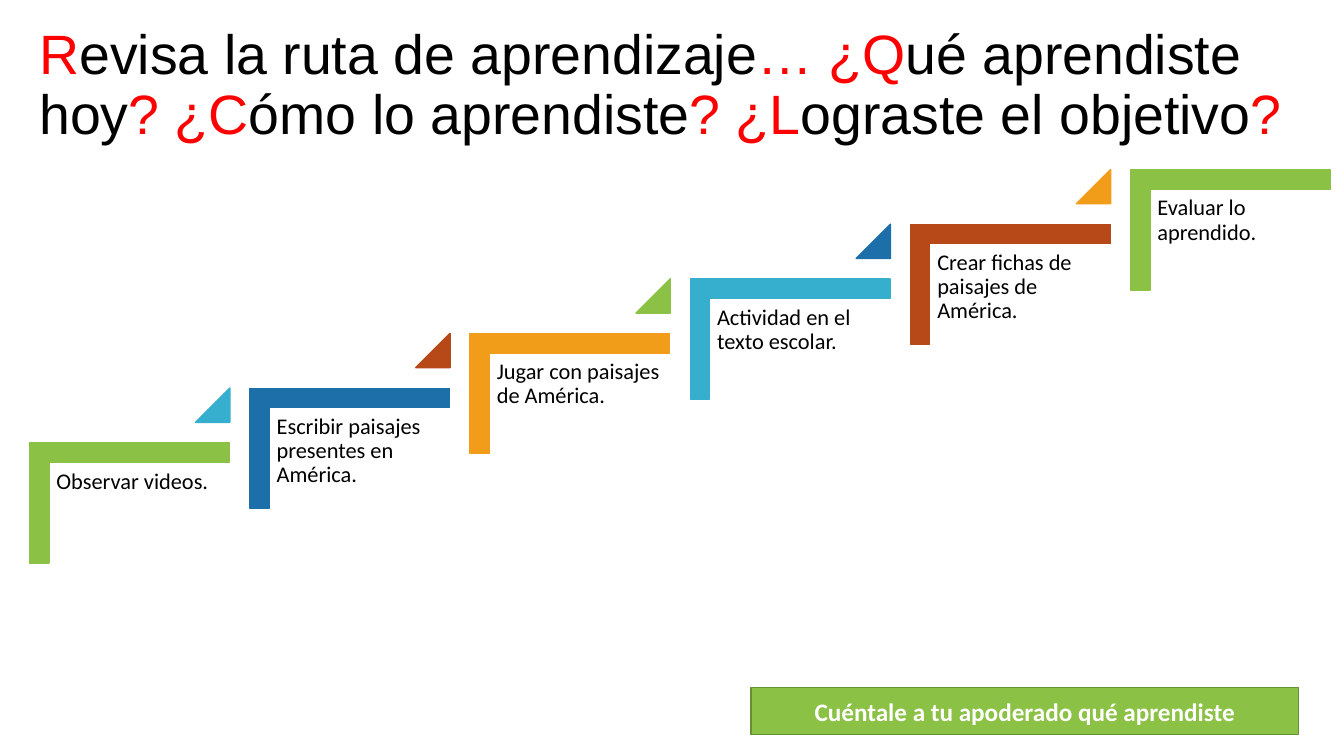
"""Build the learning route slide: a title, a rising staircase of steps and a closing banner."""
from pptx import Presentation
from pptx.dml.color import RGBColor
from pptx.enum.shapes import MSO_SHAPE
from pptx.enum.text import MSO_ANCHOR, MSO_AUTO_SIZE, PP_ALIGN
from pptx.util import Pt

BLACK = RGBColor(0x00, 0x00, 0x00)
WHITE = RGBColor(0xFF, 0xFF, 0xFF)
RED = RGBColor(0xFF, 0x00, 0x00)
GREEN = RGBColor(0x8B, 0xC1, 0x45)
DARK_GREEN = RGBColor(0x67, 0x8F, 0x33)
CYAN = RGBColor(0x36, 0xAF, 0xCE)
BLUE = RGBColor(0x1D, 0x6F, 0xA9)
RUST = RGBColor(0xB7, 0x49, 0x19)
ORANGE = RGBColor(0xF1, 0x9D, 0x19)
PALETTE = [GREEN, CYAN, BLUE, RUST, ORANGE]

TITLE = [
    ("R", RED), ("evisa la ruta de aprendizaje", BLACK),
    ("… ¿Q", RED), ("ué aprendiste hoy", BLACK),
    ("? ¿C", RED), ("ómo lo aprendiste", BLACK),
    ("? ¿L", RED), ("ograste el objetivo", BLACK),
    ("?", RED),
]
STEPS = [
    "Observar videos.",
    "Escribir paisajes presentes en América.",
    "Jugar con paisajes de América.",
    "Actividad en el texto escolar.",
    "Crear fichas de paisajes de América.",
    "Evaluar lo aprendido.",
]
BANNER = "Cuéntale a tu apoderado qué aprendiste"

PX = 9144
SLIDE_SIZE = (1333, 750)
TITLE_BOX = (29, 13, 1276, 145)
BANNER_BOX = (745, 682, 543, 47)
FIRST_CORNER, LAST_CORNER = (69, 400), (1161, 129)
CORNER_SIZE = (119, 198)
LABEL_OFFSET, LABEL_SIZE = (-20, 59), (178, 156)
TRIANGLE_OFFSET, TRIANGLE_SIZE = (125, -15), (34, 34)
LABEL_INSET = 7


def emu(*lengths):
    return [round(length * PX) for length in lengths]


def write(shape, runs, *, size, font="Calibri", bold=False, align=PP_ALIGN.LEFT,
          anchor=MSO_ANCHOR.TOP, line_spacing=0.9, inset=None):
    frame = shape.text_frame
    frame.word_wrap = True
    frame.auto_size = MSO_AUTO_SIZE.NONE
    frame.vertical_anchor = anchor
    if inset is not None:
        frame.margin_left = frame.margin_top = inset * PX
        frame.margin_right = frame.margin_bottom = inset * PX
    paragraph = frame.paragraphs[0]
    paragraph.alignment = align
    paragraph.line_spacing = line_spacing
    for text, color in runs:
        run = paragraph.add_run()
        run.text = text
        run.font.name = font
        run.font.size = Pt(size)
        run.font.bold = bold
        run.font.color.rgb = color


def add_filled(slide, kind, box, fill, line):
    shape = slide.shapes.add_shape(kind, *emu(*box))
    shape.shadow.inherit = False
    shape.fill.solid()
    shape.fill.fore_color.rgb = fill
    shape.line.color.rgb = line
    shape.line.width = Pt(1)
    return shape


def add_step(slide, index, text):
    last = len(STEPS) - 1
    x, y = (start + (end - start) * index / last
            for start, end in zip(FIRST_CORNER, LAST_CORNER))
    color, next_color = (PALETTE[(2 * index + shift) % len(PALETTE)] for shift in (0, 1))

    corner = add_filled(slide, MSO_SHAPE.CORNER, (x, y, *CORNER_SIZE), color, color)
    corner.rotation = 90
    corner.adjustments[0] = corner.adjustments[1] = 0.16

    label = slide.shapes.add_textbox(
        *emu(x + LABEL_OFFSET[0], y + LABEL_OFFSET[1], *LABEL_SIZE))
    write(label, [(text, BLACK)], size=16, inset=LABEL_INSET)

    if index < last:
        box = (x + TRIANGLE_OFFSET[0], y + TRIANGLE_OFFSET[1], *TRIANGLE_SIZE)
        triangle = add_filled(slide, MSO_SHAPE.ISOSCELES_TRIANGLE, box, next_color, next_color)
        triangle.adjustments[0] = 1


def main():
    presentation = Presentation()
    presentation.slide_width, presentation.slide_height = emu(*SLIDE_SIZE)
    slide = presentation.slides.add_slide(presentation.slide_layouts[5])

    title = slide.shapes.title
    title.left, title.top, title.width, title.height = emu(*TITLE_BOX)
    write(title, TITLE, size=39.6, font="Arial", anchor=MSO_ANCHOR.MIDDLE)

    banner = add_filled(slide, MSO_SHAPE.RECTANGLE, BANNER_BOX, GREEN, DARK_GREEN)
    write(banner, [(BANNER, WHITE)], size=18, bold=True, align=PP_ALIGN.CENTER,
          anchor=MSO_ANCHOR.MIDDLE, line_spacing=1.0)

    for index, text in enumerate(STEPS):
        add_step(slide, index, text)

    presentation.save("out.pptx")


if __name__ == "__main__":
    main()
